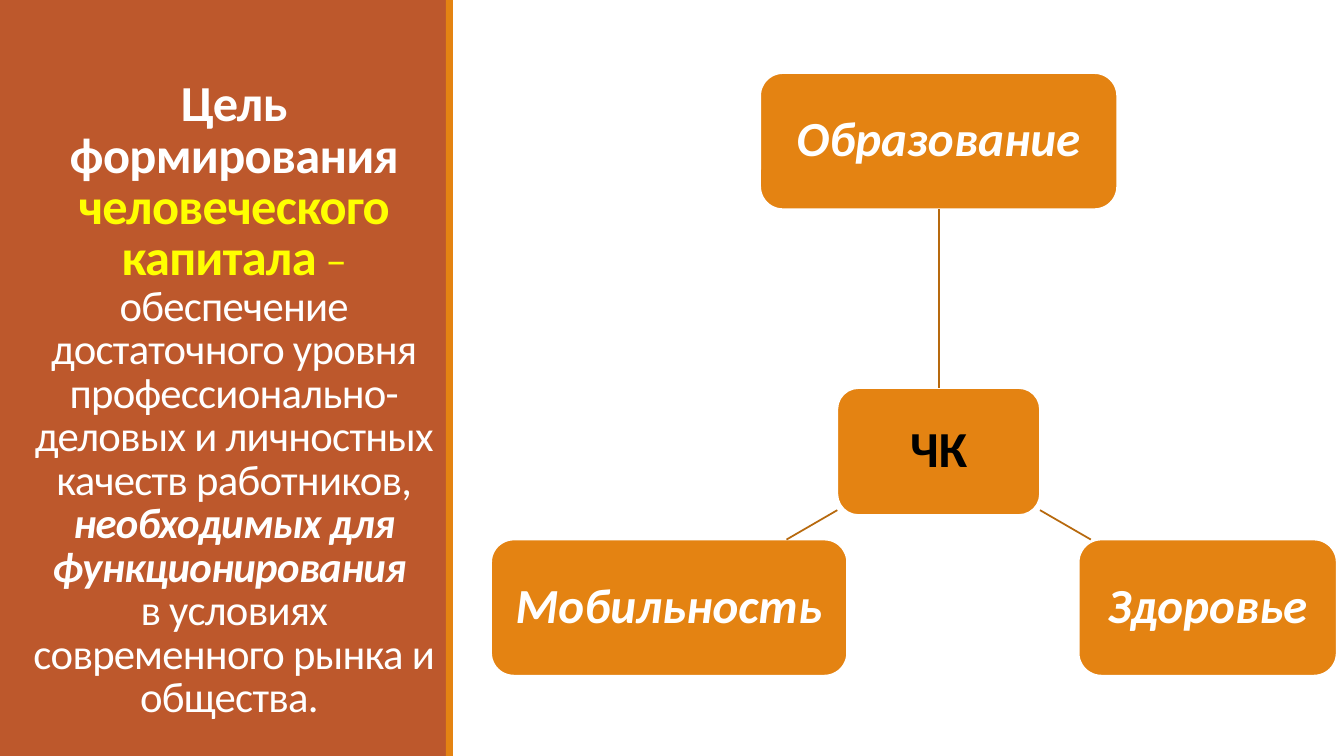
from pptx import Presentation
from pptx.dml.color import RGBColor
from pptx.enum.shapes import MSO_CONNECTOR, MSO_SHAPE
from pptx.enum.text import MSO_ANCHOR, PP_ALIGN
from pptx.oxml.ns import qn
from pptx.util import Pt
from lxml.etree import SubElement

WHITE = RGBColor(0xFF, 0xFF, 0xFF)
BLACK = RGBColor(0x00, 0x00, 0x00)
YELLOW = RGBColor(0xFF, 0xFF, 0x00)
RUST = RGBColor(0xBD, 0x58, 0x2C)
ORANGE = RGBColor(0xE4, 0x83, 0x12)
BROWN = RGBColor(0xB7, 0x69, 0x0E)
FONT = "Calibri"

# text, size, colour, bold, italic
GOAL = [
    ("Цель формирования ", 36, WHITE, True, False),
    ("человеческого капитала", 36, YELLOW, True, False),
    (" – ", 30.5, YELLOW, False, False),
    ("обеспечение достаточного уровня профессионально-деловых "
     "и личностных качеств работников, ", 30.5, WHITE, False, False),
    ("необходимых для функционирования \v", 30.5, WHITE, True, True),
    ("в условиях современного рынка и общества. ", 30.5, WHITE, False, False),
]


def add_block(slide, kind, left, top, width, height, color):
    block = slide.shapes.add_shape(
        kind, Pt(left), Pt(top), Pt(width), Pt(height))
    block.shadow.inherit = False
    block.fill.solid()
    block.fill.fore_color.rgb = color
    block.line.fill.background()
    return block


def add_panel(slide, left, top, width, height):
    """Rust side panel with an orange edge and the goal text."""
    edge = 5
    add_block(slide, MSO_SHAPE.RECTANGLE, left, top, width, height, RUST)
    add_block(slide, MSO_SHAPE.RECTANGLE, left + width - 0.5, top,
              edge, height, ORANGE)
    box = slide.shapes.add_textbox(
        Pt(left + 9.5), Pt(top + 26), Pt(width - 4), Pt(height - 47))
    frame = box.text_frame
    frame.word_wrap = True
    frame.vertical_anchor = MSO_ANCHOR.BOTTOM
    para = frame.paragraphs[0]
    para.alignment = PP_ALIGN.CENTER
    para.line_spacing = 0.85
    para.font.name = FONT
    for text, size, color, bold, slant in GOAL:
        first, *rest = text.split("\v")
        run = para.add_run()
        run.text = first
        font = run.font
        font.name = FONT
        font.size = Pt(size)
        font.color.rgb = color
        font.bold = bold
        font.italic = slant
        font._element.set("spc", "-50")
        if rest:
            para.add_line_break()


def add_node(slide, left, top, width, height, text, size, color, slant):
    node = add_block(slide, MSO_SHAPE.ROUNDED_RECTANGLE,
                     left, top, width, height, ORANGE)
    node.line.color.rgb = WHITE
    node.line.width = Pt(1.25)
    frame = node.text_frame
    frame.word_wrap = True
    frame.vertical_anchor = MSO_ANCHOR.MIDDLE
    para = frame.paragraphs[0]
    para.text = text
    para.alignment = PP_ALIGN.CENTER
    para.line_spacing = 0.9
    para.font.name = FONT
    para.font.size = Pt(size)
    para.font.color.rgb = color
    para.font.bold = True
    para.font.italic = slant
    return node


def add_link(slide, x1, y1, x2, y2):
    link = slide.shapes.add_connector(
        MSO_CONNECTOR.STRAIGHT, Pt(x1), Pt(y1), Pt(x2), Pt(y2))
    link.line.color.rgb = BROWN
    link.line.width = Pt(1.25)
    SubElement(link._element.spPr, qn("a:effectLst"))
    return link


def add_chart(slide, left, top, width, height):
    """Central node linked to one node above and two below."""
    mid = left + 319.7
    tall = 97.2
    low = top + height - tall
    core_top, core_wide = top + 225, 144.8
    core = add_node(slide, mid - core_wide / 2, core_top, core_wide, 90.7,
                    "ЧК", 36, BLACK, False)

    def add_leaf(x, y, wide, text):
        return add_node(slide, x, y, wide, tall, text, 35, WHITE, True)

    head = add_leaf(mid - 127.5, top, 255, "Образование")
    add_leaf(left, low, 254.3, "Мобильность")
    add_leaf(left + width - 184.3, low, 184.3, "Здоровье")

    stem = add_link(slide, mid, core_top, mid, top + tall)
    stem.begin_connect(core, 0)
    stem.end_connect(head, 2)
    for side in (-1, 1):
        start = mid + side * core_wide / 2
        add_link(slide, start, low - 21, start + side * 36.3, low)


def main():
    deck = Presentation()
    deck.slide_width, deck.slide_height = Pt(960), Pt(540)
    slide = deck.slides.add_slide(deck.slide_layouts[6])
    add_panel(slide, 0, 0, 319, 540)
    add_chart(slide, 350.8, 52.2, 604, 430.4)
    deck.save("out.pptx")


if __name__ == "__main__":
    main()
